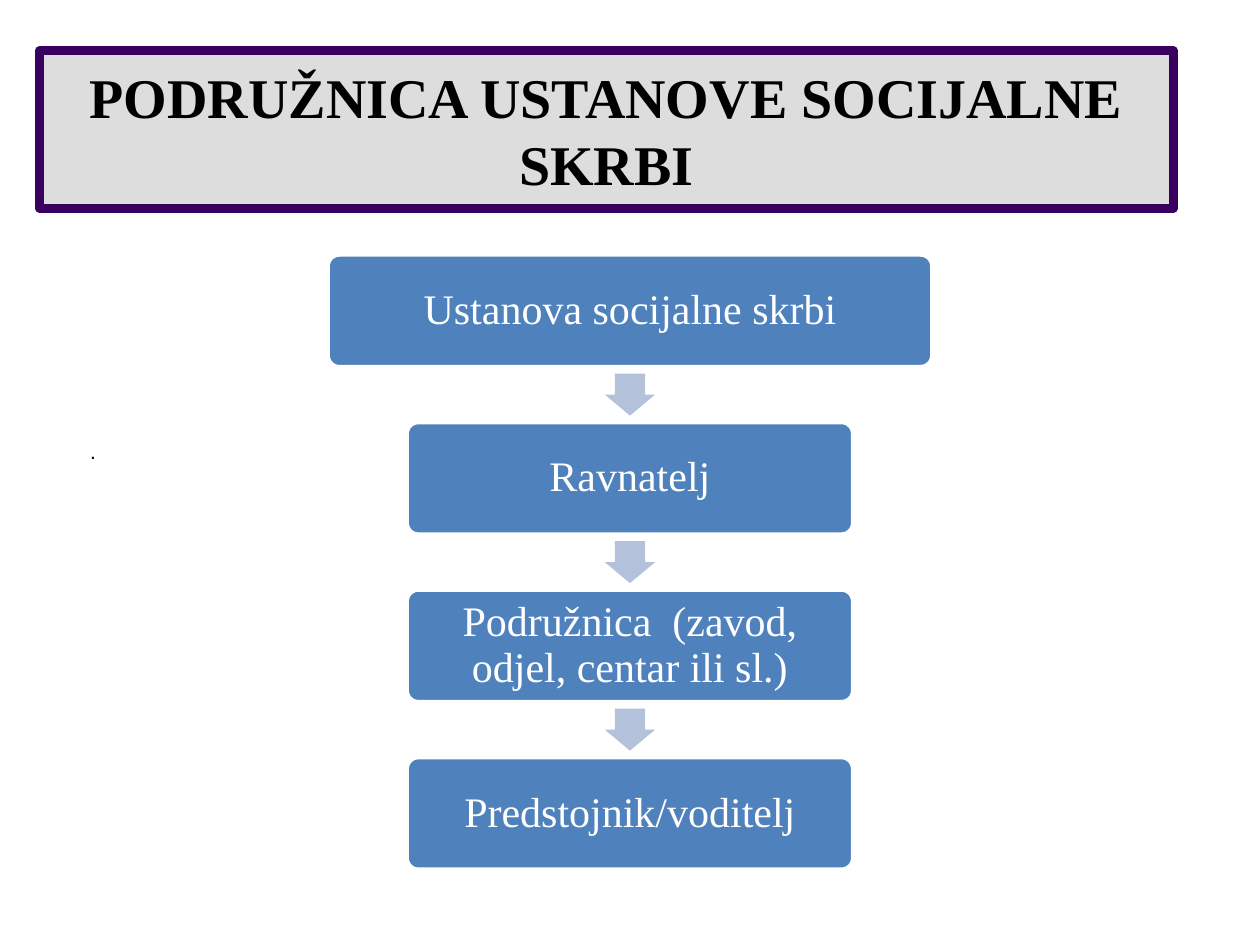
import pptx
import pptx.util
import pptx.dml.color
import pptx.enum.shapes
import pptx.enum.text

Pt = pptx.util.Pt
SHAPES = pptx.enum.shapes.MSO_SHAPE
ANCHORS = pptx.enum.text.MSO_ANCHOR
ALIGNMENTS = pptx.enum.text.PP_ALIGN


def color(code):
    return pptx.dml.color.RGBColor.from_string(code)


def add_block(page, kind, left, top, width, height, fill, line=None, weight=0):
    block = page.shapes.add_shape(kind, Pt(left), Pt(top), Pt(width), Pt(height))
    block.shadow.inherit = False
    block.fill.solid()
    block.fill.fore_color.rgb = color(fill)
    if line:
        block.line.color.rgb = color(line)
        block.line.width = Pt(weight)
    else:
        block.line.fill.background()
    return block


def write(box, text, font, size, code, align, inset, bold=False):
    frame = box.text_frame
    frame.text = text
    frame.word_wrap = True
    frame.vertical_anchor = ANCHORS.MIDDLE
    frame.margin_left = frame.margin_right = Pt(inset)
    frame.margin_top = frame.margin_bottom = Pt(inset / 2)
    para = frame.paragraphs[0]
    para.alignment = align
    span = para.runs[0]
    span.font.name = font
    span.font.size = Pt(size)
    span.font.bold = bold
    span.font.color.rgb = color(code)
    return para


def add_title(page, left, top, width, height):
    box = add_block(page, SHAPES.RECTANGLE, left, top, width, height, "DDDDDD", "38015F", 5)
    write(box, "PODRUŽNICA USTANOVE SOCIJALNE SKRBI", "Times New Roman", 32,
          "000000", ALIGNMENTS.CENTER, 7.2, True)


def add_body(page, left, top, width, height):
    box = page.shapes.add_textbox(Pt(left), Pt(top), Pt(width), Pt(height))
    write(box, ".", "Arial", 12, "000000", ALIGNMENTS.LEFT, 0)


def add_flow(page, left, top, width, height):
    levels = [
        ("Ustanova socijalne skrbi", width),
        ("Ravnatelj", 254.6),
        ("Podružnica  (zavod, odjel, centar ili sl.)", 254.6),
        ("Predstojnik/voditelj", 254.6),
    ]
    box_height, arrow_width, arrow_height = 63.8, 28.8, 24
    step = (height - box_height) / (len(levels) - 1)
    center = left + width / 2
    for index, (text, box_width) in enumerate(levels):
        box_top = top + index * step
        if index:
            arrow_top = box_top - (step - box_height + arrow_height) / 2
            arrow = add_block(page, SHAPES.DOWN_ARROW, center - arrow_width / 2, arrow_top,
                              arrow_width, arrow_height, "B3C1DB")
            arrow.adjustments[0] = 0.6
            arrow.adjustments[1] = 0.5
        box = add_block(page, SHAPES.ROUNDED_RECTANGLE, center - box_width / 2, box_top,
                        box_width, box_height, "4F81BD", "FFFFFF", 2)
        box.adjustments[0] = 0.1
        para = write(box, text, "Times New Roman", 24, "FFFFFF", ALIGNMENTS.CENTER, 9)
        para.line_spacing = 0.9


def main():
    deck = pptx.Presentation()
    deck.slide_width = Pt(720)
    deck.slide_height = Pt(540)
    page = deck.slides.add_slide(deck.slide_layouts[6])
    add_body(page, 51.5, 250.8, 20, 14)
    add_title(page, 22.5, 29, 648, 90)
    add_flow(page, 187.5, 145.7, 345, 351)
    deck.save("out.pptx")


if __name__ == "__main__":
    main()
